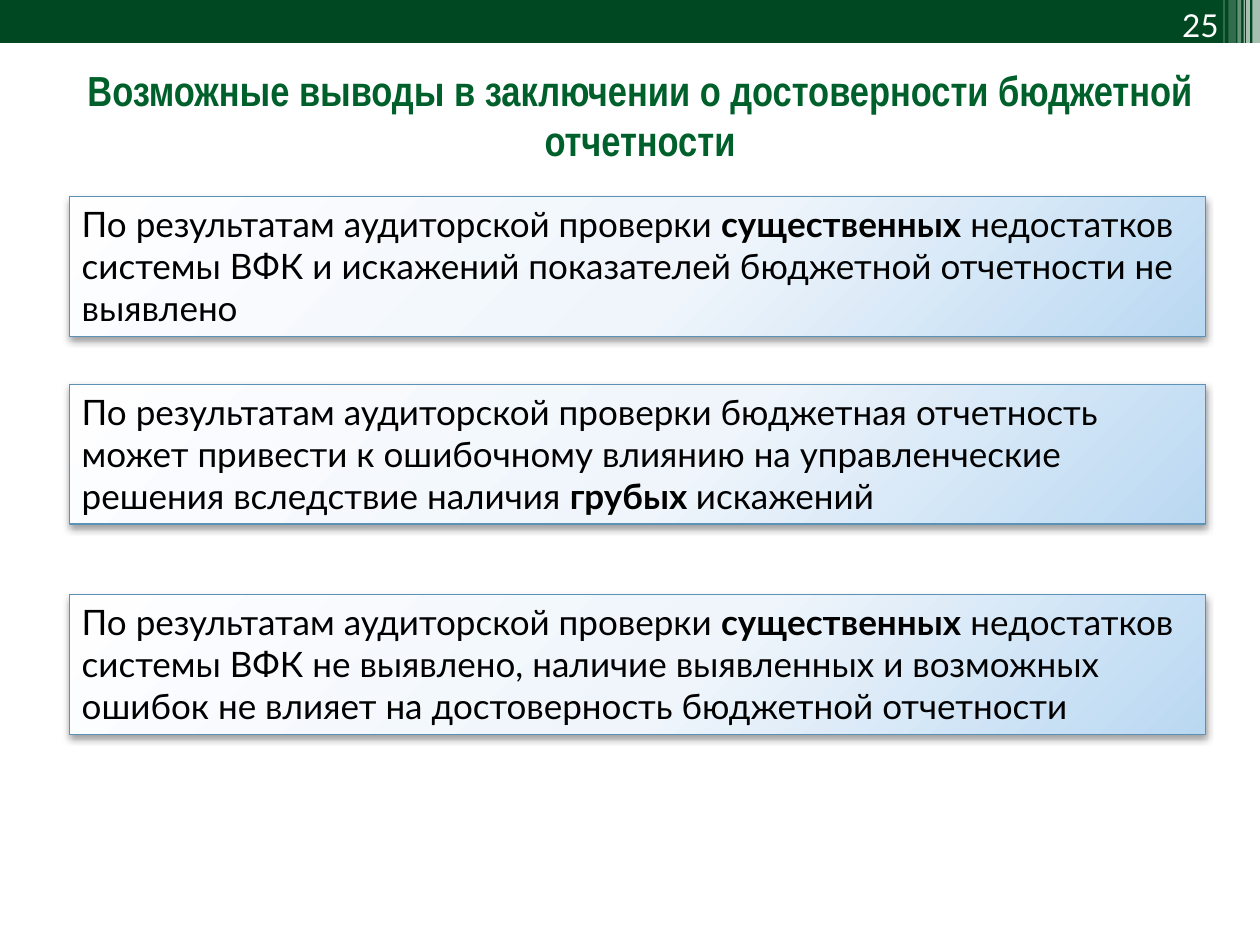
from lxml.etree import SubElement
from pptx import Presentation
from pptx.dml.color import RGBColor
from pptx.enum.shapes import MSO_SHAPE
from pptx.enum.text import MSO_ANCHOR, MSO_AUTO_SIZE, PP_ALIGN
from pptx.oxml import parse_xml
from pptx.oxml.ns import nsdecls, qn
from pptx.util import Inches, Pt

TITLE = ["Возможные выводы в заключении о достоверности бюджетной", "отчетности"]
CONCLUSIONS = [
    (1.56, "По результатам аудиторской проверки ", "существенных",
     " недостатков системы ВФК и искажений показателей бюджетной отчетности не выявлено"),
    (3.05, "По результатам аудиторской проверки бюджетная отчетность может привести "
     "к ошибочному влиянию на управленческие решения вследствие наличия ", "грубых ", "искажений"),
    (4.72, "По результатам аудиторской проверки ", "существенных",
     " недостатков системы ВФК не выявлено, наличие выявленных и возможных ошибок "
     "не влияет на достоверность бюджетной отчетности"),
]
STRIPES = [(9.94, 0.06, 0.34, 65), (9.89, 0.03, 0.34, 65), (9.87, 0.01, 0.34, 60),
           (9.82, 0.03, 0.34, 40), (9.75, 0.06, 0.36, 20), (9.71, 0.01, 0.36, 30)]
GRADIENT = [(0, "FEFEFF"), (55, "EFF5FB"), (100, "BAD8F2")]
TITLE_FONT = {"name": "Arial Narrow", "size": Pt(24), "bold": True}
NUMBER_FONT = {"name": "Lato", "size": Pt(18)}
BODY_FONT = {"name": "Lato", "size": Pt(20)}


def rgb(value):
    """Turn a hex string into a colour."""
    return RGBColor.from_string(value)


def format_font(font, values, color):
    """Set font attributes and colour."""
    for key, value in values.items():
        setattr(font, key, value)
    font.color.rgb = rgb(color)


def add_band(slide, left, width, height, color, opacity=100):
    """Add a borderless strip along the top edge."""
    band = slide.shapes.add_shape(
        MSO_SHAPE.RECTANGLE, Inches(left), 0, Inches(width), Inches(height))
    band.shadow.inherit = False
    band.fill.solid()
    band.fill.fore_color.rgb = rgb(color)
    band.line.fill.background()
    if opacity < 100:
        tint = band._element.spPr.find(qn("a:solidFill"))[0]
        SubElement(tint, qn("a:alpha"), val=str(opacity * 1000))


def add_page_number(slide, number):
    """Add the page number on the top band."""
    box = slide.shapes.add_textbox(Inches(8.94), 0, Inches(0.83), Inches(0.4))
    frame = box.text_frame
    frame.word_wrap = True
    frame.vertical_anchor = MSO_ANCHOR.BOTTOM
    paragraph = frame.paragraphs[0]
    paragraph.text = number
    paragraph.alignment = PP_ALIGN.RIGHT
    format_font(paragraph.font, NUMBER_FONT, "FFFFFF")


def set_title(slide, lines):
    """Place and format the title."""
    title = slide.shapes.title
    title.left, title.top = Inches(0.16), Inches(0.59)
    title.width, title.height = Inches(9.84), Inches(0.64)
    frame = title.text_frame
    frame.text = "\n".join(lines)
    frame.auto_size = MSO_AUTO_SIZE.NONE
    frame.vertical_anchor = MSO_ANCHOR.MIDDLE
    for paragraph in frame.paragraphs:
        paragraph.alignment = PP_ALIGN.CENTER
        format_font(paragraph.font, TITLE_FONT, "00602B")


def apply_panel_effects(panel):
    """Give a panel its radial gradient and soft shadow."""
    stops = "".join(f'<a:gs pos="{pos * 1000}"><a:srgbClr val="{color}"/></a:gs>'
                    for pos, color in GRADIENT)
    gradient = parse_xml(
        f'<a:gradFill {nsdecls("a")} rotWithShape="1"><a:gsLst>{stops}</a:gsLst>'
        '<a:path path="circle"><a:fillToRect l="-40000" t="-90000" r="140000" b="190000"/>'
        '</a:path></a:gradFill>')
    shadow = parse_xml(
        f'<a:effectLst {nsdecls("a")}><a:outerShdw blurRad="{Pt(4.1)}" dist="{Pt(2)}" '
        'dir="5400000" rotWithShape="0"><a:srgbClr val="000000"><a:alpha val="40000"/>'
        '</a:srgbClr></a:outerShdw></a:effectLst>')
    properties = panel._element.spPr
    properties.find(qn("a:prstGeom")).addnext(gradient)
    properties.find(qn("a:ln")).addnext(shadow)


def add_conclusion(slide, top, before, emphasis, after):
    """Add a panel with one conclusion and its bold word."""
    panel = slide.shapes.add_shape(
        MSO_SHAPE.RECTANGLE, Inches(0.55), Inches(top), Inches(9.02), Inches(1.11))
    panel.line.color.rgb = rgb("5C92B5")
    panel.line.width = Pt(0.75)
    apply_panel_effects(panel)
    frame = panel.text_frame
    frame.word_wrap = True
    frame.vertical_anchor = MSO_ANCHOR.TOP
    frame.auto_size = MSO_AUTO_SIZE.SHAPE_TO_FIT_TEXT
    paragraph = frame.paragraphs[0]
    paragraph.alignment = PP_ALIGN.LEFT
    for text, bold in ((before, False), (emphasis, True), (after, False)):
        run = paragraph.add_run()
        run.text = text
        format_font(run.font, BODY_FONT | {"bold": bold}, "000000")


def main():
    """Build and save the slide."""
    deck = Presentation()
    deck.slide_width, deck.slide_height = Inches(10), Inches(7.5)
    slide = deck.slides.add_slide(deck.slide_layouts[5])
    add_band(slide, 0, 10, 0.34, "004821")
    for left, width, height, opacity in STRIPES:
        add_band(slide, left, width, height, "FFFFFF", opacity)
    add_page_number(slide, "25")
    set_title(slide, TITLE)
    for conclusion in CONCLUSIONS:
        add_conclusion(slide, *conclusion)
    deck.save("out.pptx")


if __name__ == "__main__":
    main()
